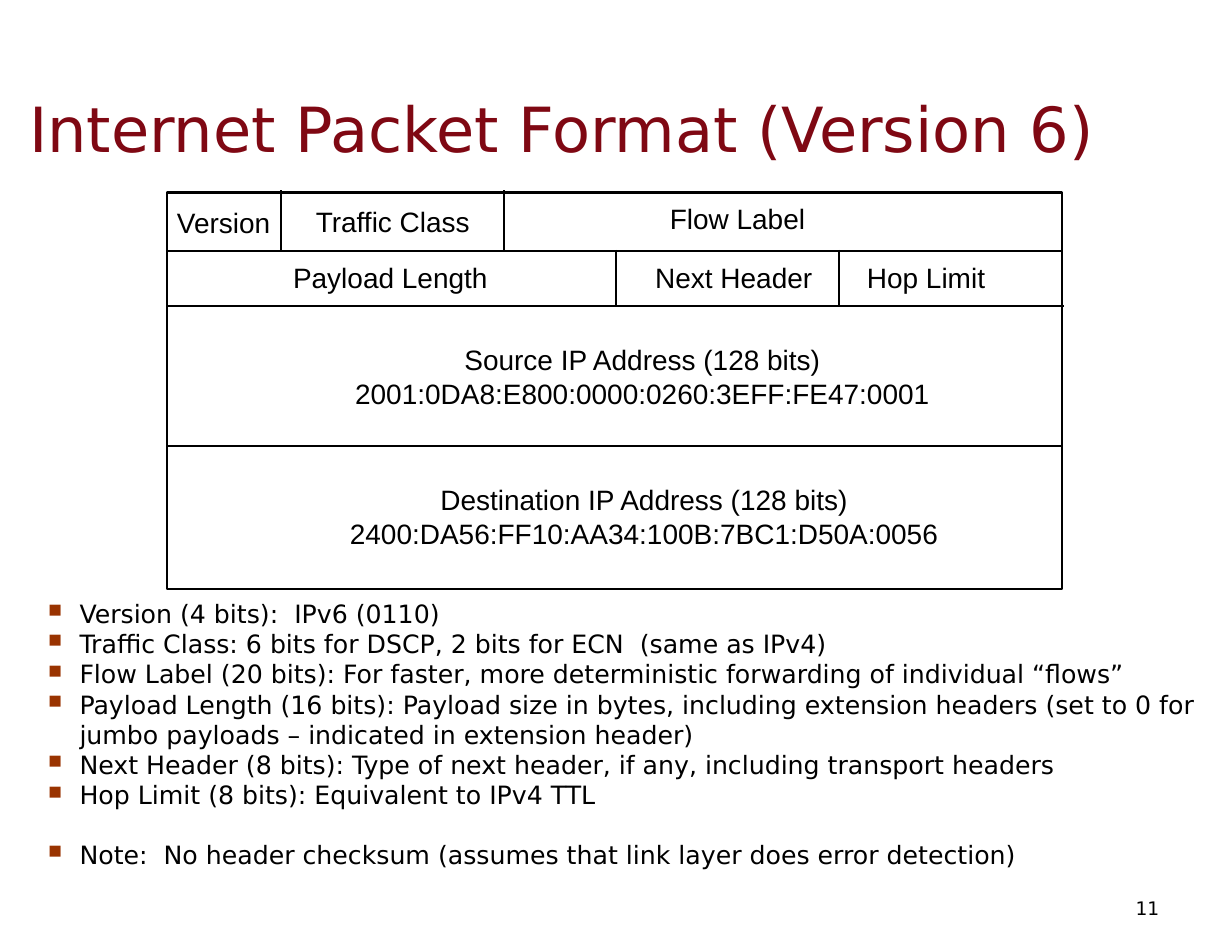
from typing import NamedTuple

from lxml import etree
from pptx import Presentation
from pptx.dml.color import RGBColor
from pptx.enum.shapes import MSO_CONNECTOR as Conn, MSO_SHAPE as Shape
from pptx.enum.text import MSO_ANCHOR as Anchor, PP_ALIGN as Align
from pptx.oxml.ns import qn
from pptx.util import Inches, Pt

BLACK = RGBColor(0x00, 0x00, 0x00)
MAROON = RGBColor(0x7F, 0x08, 0x13)
RUST = RGBColor(0x99, 0x33, 0x00)
SANS = "DejaVu Sans"
ARIAL = "Arial"
BODY_SIZE = 16.2


class Field(NamedTuple):
    left: float
    top: float
    width: float
    height: float
    lines: list[str]
    align: Align = Align.LEFT


class Rule(NamedTuple):
    x1: float
    y1: float
    x2: float
    y2: float


# Header field labels
FIELDS = [
    Field(1.58, 1.79, 1, 0.4, ["Version"]),
    Field(2.82, 1.78, 1.74, 0.4, ["Traffic Class"]),
    Field(5.98, 1.75, 1.81, 0.4, ["Flow Label"]),
    Field(2.37, 2.28, 2.23, 0.4, ["Payload Length"], Align.CENTER),
    Field(5.85, 2.28, 1.5, 0.4, ["Next Header"]),
    Field(7.74, 2.28, 1.5, 0.4, ["Hop Limit"]),
    Field(2.37, 3.01, 6.73, 1.01,
          ["Source IP Address (128 bits)",
           "2001:0DA8:E800:0000:0260:3EFF:FE47:0001"], Align.CENTER),
    Field(2.86, 4.26, 5.78, 0.71,
          ["Destination IP Address (128 bits)",
           "2400:DA56:FF10:AA34:100B:7BC1:D50A:0056"], Align.CENTER),
]

# Row separators, then field separators in the first two rows
RULES = [Rule(x, y, x + 8, y) for x, y in [(1.48, 2.24), (1.5, 2.73), (1.49, 3.98)]]
RULES += [Rule(x, 1.7, x, 2.24) for x in (2.51, 4.5)]
RULES += [Rule(x, 2.23, x, 2.73) for x in (5.5, 7.49)]

BULLETS = [
    "Version (4 bits):  IPv6 (0110)",
    "Traffic Class: 6 bits for DSCP, 2 bits for ECN  (same as IPv4)",
    "Flow Label (20 bits): For faster, more deterministic forwarding of "
    "individual “flows”",
    "Payload Length (16 bits): Payload size in bytes, including extension "
    "headers (set to 0 for jumbo payloads – indicated in extension header)",
    "Next Header (8 bits): Type of next header, if any, including transport headers",
    "Hop Limit (8 bits): Equivalent to IPv4 TTL",
    "Note:  No header checksum (assumes that link layer does error detection)",
]


def add_text(s, field: Field, font: str, size: float, color: RGBColor = BLACK,
             inset: tuple[float, float] = (0, 0.05), anchor: Anchor = Anchor.TOP,
             bulleted: bool = False):
    sp = s.shapes.add_textbox(*map(Inches, field[:4]))
    tf = sp.text_frame
    tf.word_wrap = True
    tf.vertical_anchor = anchor
    tf.margin_left = tf.margin_right = Inches(inset[0])
    tf.margin_top = tf.margin_bottom = Inches(inset[1])
    tf.text = "\n".join(field.lines)
    for p in tf.paragraphs:
        p.alignment = field.align
        if bulleted:
            add_bullet(p)
        for r in p.runs:
            r.font.name = font
            r.font.size = Pt(size)
            r.font.color.rgb = color
    return tf


def add_bullet(p) -> None:
    pPr = p._p.get_or_add_pPr()
    pPr.set("marL", str(Inches(0.42)))
    pPr.set("indent", str(Inches(-0.28)))
    color = etree.SubElement(pPr, qn("a:buClr"))
    etree.SubElement(color, qn("a:srgbClr"), val=str(RUST))
    etree.SubElement(pPr, qn("a:buSzPct"), val="75000")
    etree.SubElement(pPr, qn("a:buChar"), char="■")


def add_rule(s, rule: Rule) -> None:
    line = s.shapes.add_connector(Conn.STRAIGHT, *map(Inches, rule))
    line.line.color.rgb = BLACK
    line.line.width = Pt(1)
    etree.SubElement(line._element.spPr, qn("a:effectLst"))


def main() -> None:
    prs = Presentation()
    prs.slide_width, prs.slide_height = Inches(11), Inches(8.5)
    s = prs.slides.add_slide(prs.slide_layouts[6])

    # Title
    add_text(s, Field(0.15, 0.62, 10.53, 1.04, ["Internet Packet Format (Version 6)"]),
             SANS, 40, MAROON, (0.11, 0.06), Anchor.MIDDLE)

    # Packet header diagram
    frame = s.shapes.add_shape(Shape.RECTANGLE, Inches(1.49), Inches(1.72),
                               Inches(7.99), Inches(3.54))
    frame.shadow.inherit = False
    frame.fill.background()
    frame.line.color.rgb = BLACK
    frame.line.width = Pt(1.5)
    for rule in RULES:
        add_rule(s, rule)
    for field in FIELDS:
        add_text(s, field, ARIAL, 18)

    # Field explanations, with the note set one line apart
    tf = add_text(s, Field(0.18, 5.28, 10.82, 3.09, BULLETS), SANS, BODY_SIZE,
                  inset=(0.11, 0.06), bulleted=True)
    tf.paragraphs[-1].space_before = Pt(19)

    # Slide number
    add_text(s, Field(7.88, 7.88, 2.57, 0.45, ["11"], Align.RIGHT), SANS, 12,
             inset=(0.1, 0.05), anchor=Anchor.MIDDLE)

    prs.save("out.pptx")


if __name__ == "__main__":
    main()
